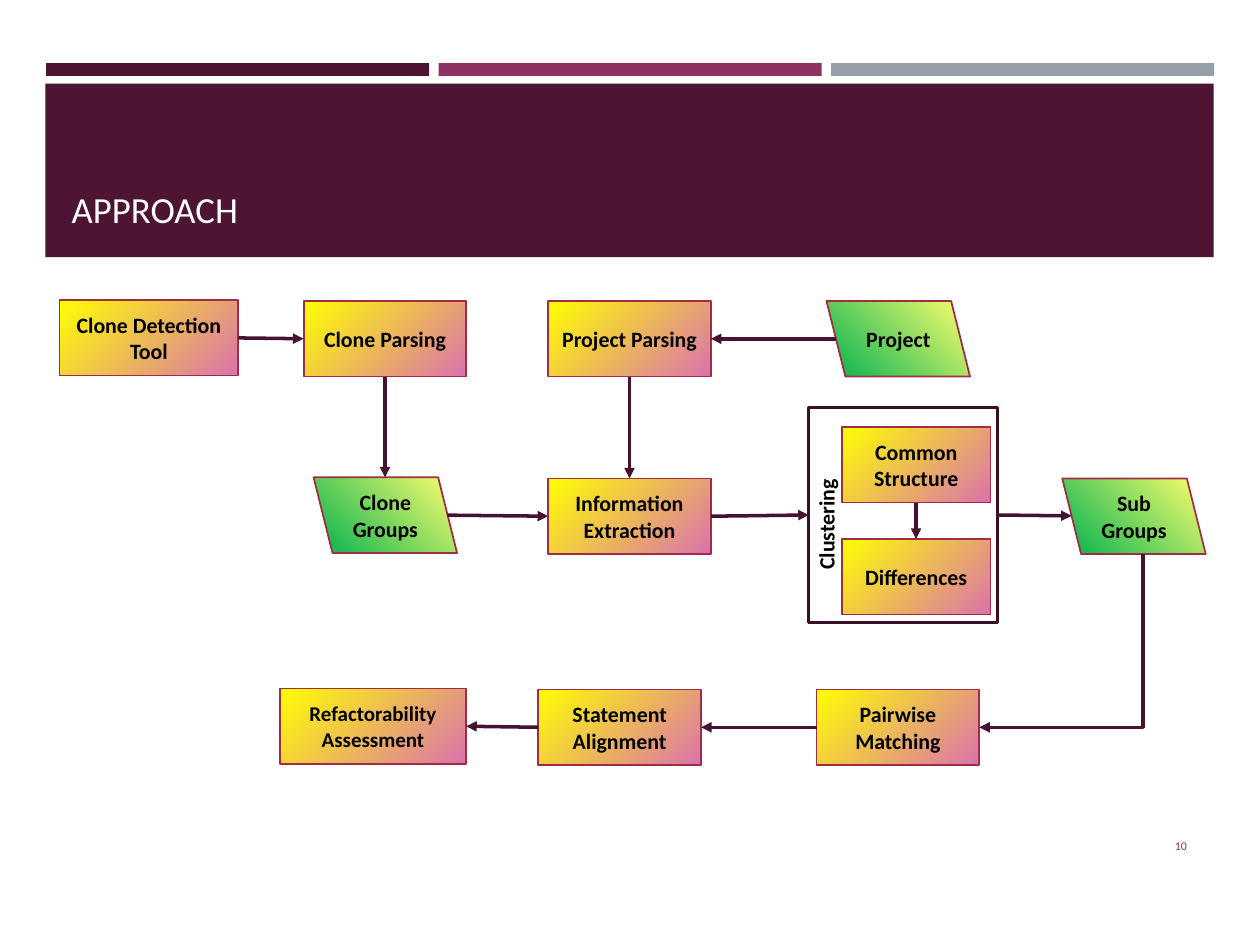
"""Build the approach slide: a flow from clone detection to refactorability assessment."""
from lxml import etree
from pptx import Presentation
from pptx.dml.color import RGBColor
from pptx.enum.shapes import MSO_CONNECTOR, MSO_SHAPE
from pptx.enum.text import MSO_ANCHOR, MSO_AUTO_SIZE, PP_ALIGN
from pptx.oxml.ns import qn
from pptx.util import Pt

RECTANGLE, PARALLELOGRAM = MSO_SHAPE.RECTANGLE, MSO_SHAPE.PARALLELOGRAM
STRAIGHT, ELBOW = MSO_CONNECTOR.STRAIGHT, MSO_CONNECTOR.ELBOW
LEFT_ALIGN, CENTER, RIGHT_ALIGN = PP_ALIGN.LEFT, PP_ALIGN.CENTER, PP_ALIGN.RIGHT
MIDDLE, BOTTOM_ANCHOR = MSO_ANCHOR.MIDDLE, MSO_ANCHOR.BOTTOM
GROW = MSO_AUTO_SIZE.SHAPE_TO_FIT_TEXT
TOP, LEFT, BOTTOM, RIGHT = range(4)

PLUM, MAGENTA, GRAY = "4D1434", "903163", "969FA7"
OUTLINE, FRAME, ARROW = "A02D44", "390F26", "45122F"
STEP_COLORS, DATA_COLORS = ("FFFF03", "DA72AD"), ("FFFF6E", "00B050")
STEP_WIDTH, DATA_WIDTH, INNER_WIDTH, HEIGHT = 93, 82, 85, 43.2
ROW_1, ROW_2, ROW_3 = 172, 273.4, 394


def color(value):
    return RGBColor.from_string(value)


class SlideBuilder:
    """Hold the style and the current slide."""

    def __init__(self, slide, font="Calibri", size=12.5):
        self.slide, self.font, self.size = slide, font, size

    def set_text(self, shape, text, size=None, fill="000000", bold=True,
                 align=CENTER, anchor=MIDDLE):
        frame = shape.text_frame
        frame.text = text
        frame.word_wrap = True
        frame.vertical_anchor = anchor
        paragraph = frame.paragraphs[0]
        paragraph.alignment = align
        font = paragraph.runs[0].font
        font.name, font.size, font.bold = self.font, Pt(size or self.size), bold
        font.color.rgb = color(fill)

    def title(self, text, left, top, width, height):
        title = self.slide.shapes.title
        title.left, title.top, title.width, title.height = map(Pt, (left, top, width, height))
        self.set_text(title, text, 21, "FFFFFF", False, LEFT_ALIGN, BOTTOM_ANCHOR)
        self.slide.shapes._spTree.append(title._element)

    def shape(self, kind, left, top, width, height):
        shape = self.slide.shapes.add_shape(kind, *map(Pt, (left, top, width, height)))
        shape.shadow.inherit = False
        return shape

    def bar(self, left, top, width, height, fill):
        bar = self.shape(RECTANGLE, left, top, width, height)
        bar.fill.solid()
        bar.fill.fore_color.rgb = color(fill)
        bar.line.fill.background()

    def frame(self, left, top, width, height):
        frame = self.shape(RECTANGLE, left, top, width, height)
        frame.fill.background()
        frame.line.color.rgb = color(FRAME)
        frame.line.width = Pt(1.75)
        return frame

    def node(self, kind, text, left, top, width, colors, size=None):
        node = self.shape(kind, left, top, width, HEIGHT)
        node.fill.gradient()
        node.fill.gradient_angle = 315
        for stop, value in zip(node.fill.gradient_stops, colors):
            stop.color.rgb = color(value)
        node.line.color.rgb = color(OUTLINE)
        node.line.width = Pt(1)
        self.set_text(node, text, size)
        node.text_frame.margin_left = node.text_frame.margin_right = Pt(5.4)
        return node

    def step(self, text, left, top, width=STEP_WIDTH, size=None):
        return self.node(RECTANGLE, text, left, top, width, STEP_COLORS, size)

    def data(self, text, left, top):
        data = self.node(PARALLELOGRAM, text, left, top, DATA_WIDTH, DATA_COLORS)
        data._element.spPr.find(qn("a:xfrm")).set("flipH", "1")

    def label(self, text, left, top, width, height, **style):
        label = self.slide.shapes.add_textbox(*map(Pt, (left, top, width, height)))
        self.set_text(label, text, **style)
        return label

    def side_label(self, text, left, top, width, height):
        label = self.label(text, left, top, width, height, align=LEFT_ALIGN, anchor=None)
        label.text_frame.word_wrap = False
        label.text_frame.auto_size = GROW
        label.rotation = 270

    def connector(self, kind, start, end):
        connector = self.slide.shapes.add_connector(kind, *map(Pt, (*start, *end)))
        connector.line.color.rgb = color(ARROW)
        connector.line.width = Pt(2)
        line = connector._element.spPr.find(qn("a:ln"))
        etree.SubElement(line, qn("a:tailEnd"), type="triangle")
        etree.SubElement(connector._element.spPr, qn("a:effectLst"))
        return connector

    def arrow(self, start, end):
        """Draw an arrow between points or (rectangle, side) pairs."""
        free = [(0, 0) if hasattr(spot[0], "shape_id") else spot for spot in (start, end)]
        arrow = self.connector(STRAIGHT, *free)
        if start is not free[0]:
            arrow.begin_connect(*start)
        if end is not free[1]:
            arrow.end_connect(*end)

    def corner_arrow(self, start, end):
        """Draw an arrow that runs down and then left."""
        (start_x, start_y), (end_x, end_y) = start, end
        middle_x, middle_y = (start_x + end_x) / 2, (start_y + end_y) / 2
        half_width, half_height = (end_y - start_y) / 2, (start_x - end_x) / 2
        arrow = self.connector(ELBOW, (middle_x - half_width, middle_y - half_height),
                               (middle_x + half_width, middle_y + half_height))
        properties = arrow._element.spPr
        properties.find(qn("a:xfrm")).set("rot", "5400000")
        properties.find(qn("a:prstGeom")).set("prst", "bentConnector2")


def main():
    presentation = Presentation()
    presentation.slide_width, presentation.slide_height = Pt(720), Pt(540)
    builder = SlideBuilder(presentation.slides.add_slide(presentation.slide_layouts[5]))

    for index, fill in enumerate((PLUM, MAGENTA, GRAY)):
        builder.bar(26.4 + index * 224.3, 36, 218.9, 7.4, fill)
    builder.bar(26, 47.8, 667.5, 99.2, PLUM)
    builder.title("APPROACH", 33.8, 57.6, 651.6, 77.8)

    tool = builder.step("Clone Detection Tool", 34, ROW_1 - 0.5, 102.2)
    clone_parsing = builder.step("Clone Parsing", 173.5, ROW_1)
    project_parsing = builder.step("Project Parsing", 313.2, ROW_1)
    builder.data("Project", 472.3, ROW_1)
    builder.data("Clone Groups", 179.2, ROW_2 - 0.6)
    extraction = builder.step("Information Extraction", 313.2, ROW_2)
    clustering = builder.frame(462.2, 232.8, 108, 123)
    common = builder.step("Common Structure", 481, 244, INNER_WIDTH)
    differences = builder.step("Differences", 481, 308, INNER_WIDTH)
    builder.side_label("Clustering", 434.2, 283.7, 75.6, 22.3)
    builder.data("Sub Groups", 607, ROW_2)
    pairwise = builder.step("Pairwise Matching", 466.6, ROW_3)
    statement = builder.step("Statement Alignment", 307.6, ROW_3)
    assessment = builder.step("Refactorability Assessment", 160, ROW_3 - 0.6, 106.4, 12)

    for start, end in (
        ((tool, RIGHT), (clone_parsing, LEFT)),
        ((clone_parsing, BOTTOM), (220, 272.8)),
        ((477.6, 193.6), (project_parsing, RIGHT)),
        ((project_parsing, BOTTOM), (extraction, TOP)),
        ((255.6, 294.4), (extraction, LEFT)),
        ((extraction, RIGHT), (clustering, LEFT)),
        ((common, BOTTOM), (differences, TOP)),
        ((clustering, RIGHT), (612.4, 294.8)),
        ((pairwise, LEFT), (statement, RIGHT)),
        ((statement, LEFT), (assessment, RIGHT)),
    ):
        builder.arrow(start, end)
    builder.corner_arrow((653.2, 316.4), (559.6, 415.6))

    builder.label("10", 623.5, 468.7, 61.9, 28.8, size=6.8, fill=MAGENTA,
                  bold=False, align=RIGHT_ALIGN)
    presentation.save("out.pptx")


if __name__ == "__main__":
    main()
